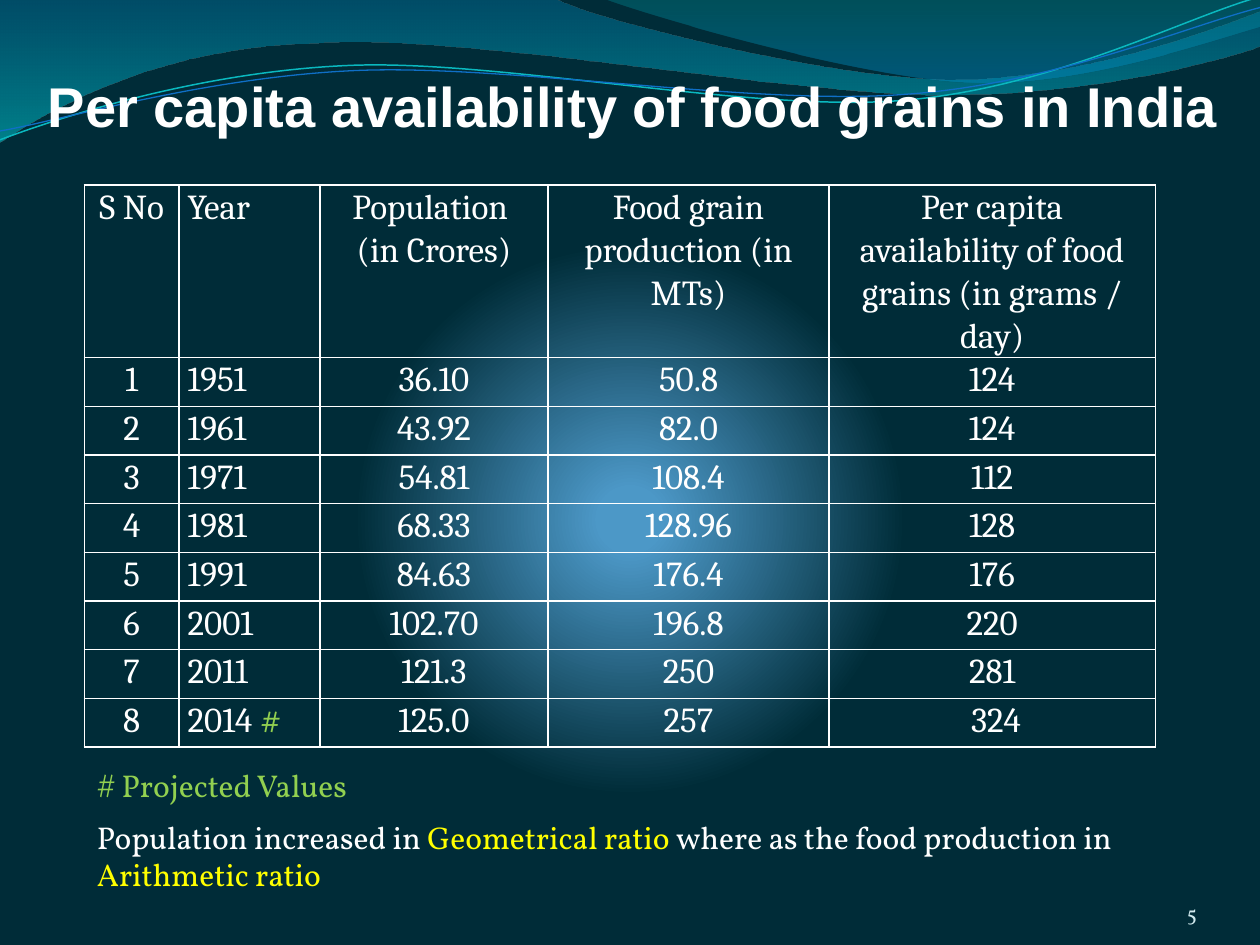
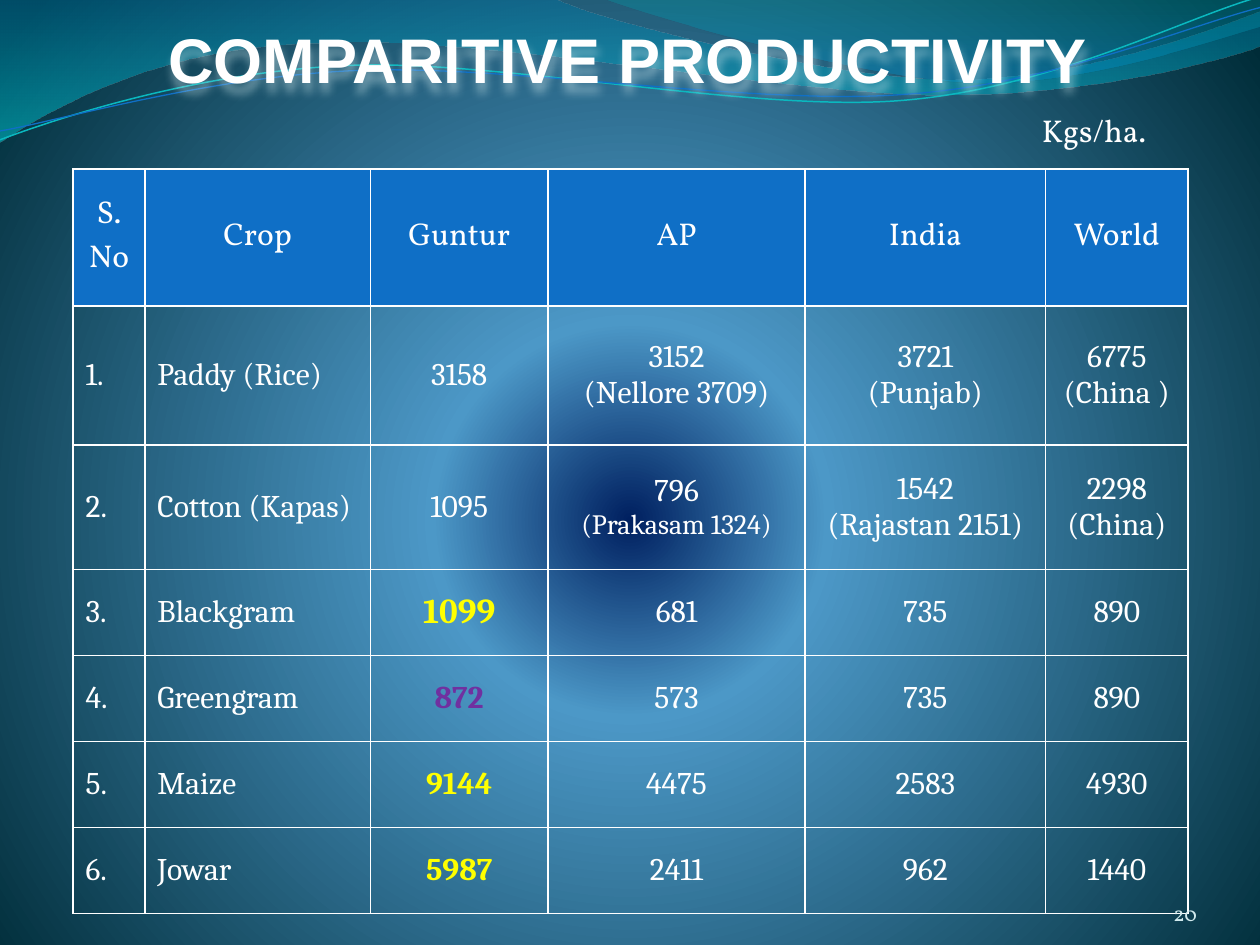
import lxml.etree
import pptx
import pptx.dml.color
import pptx.enum.text
import pptx.oxml.ns
import pptx.util

RGB = pptx.dml.color.RGBColor
ALIGN = pptx.enum.text.PP_ALIGN
ANCHOR = pptx.enum.text.MSO_ANCHOR
Inches = pptx.util.Inches
Pt = pptx.util.Pt
qn = pptx.oxml.ns.qn

WHITE = RGB(0xFF, 0xFF, 0xFF)
YELLOW = RGB(0xFF, 0xFF, 0x00)
GREEN = RGB(0x92, 0xD0, 0x50)
PURPLE = RGB(0x70, 0x30, 0xA0)
BLUE = RGB(0x0F, 0x6F, 0xC6)
AQUA = RGB(0x0A, 0xB8, 0xBF)
PALE = RGB(0xD1, 0xEA, 0xEE)
NIGHT = RGB(0x00, 0x2C, 0x38)
SKY = RGB(0x4C, 0x98, 0xC7)
NAVY = RGB(0x00, 0x20, 0x60)
DEEP_BLUE = RGB(0x00, 0x74, 0xA1)
CYAN = RGB(0x00, 0xC6, 0xCF)
TEAL = RGB(0x00, 0xA1, 0xA9)
OCEAN = RGB(0x00, 0x8B, 0xBF)

TITLE_FONT, BODY_FONT, TABLE_FONT = "Arial", "Vollkorn", "Cambria"
SLIDE_WIDTH, SLIDE_HEIGHT = 10, 7.5
DRAWING_NS = "http://schemas.openxmlformats.org/drawingml/2006/main"
DOWNWARD = '<a:lin ang="5400000" scaled="1"/>'
RADIAL = ('<a:path path="circle"><a:fillToRect l="10000" t="110000" '
          'r="10000" b="100000"/></a:path>')
TITLE_SHADOW = (f'<a:effectLst xmlns:a="{DRAWING_NS}"><a:outerShdw blurRad="63500" '
                f'dist="63500" dir="5400000"><a:srgbClr val="{PALE}">'
                '<a:alpha val="45000"/></a:srgbClr></a:outerShdw></a:effectLst>')

# Text is a string or a list of runs; a run is a string or (string, format).
# Each "\n" starts a new paragraph.
FOOD_TITLE = "Per capita availability of food grains in India"
FOOD_COLUMNS = [0.75, 1.12, 1.81, 2.23, 2.59]
FOOD_ROW_HEIGHTS = [1.16] + [3.09 / 8] * 8
FOOD_ROWS = [
    ["S No", "Year", "Population \n(in Crores)", "Food grain production (in MTs)",
     "Per capita availability of food grains (in grams / day)"],
    ["1", "1951", "36.10", "50.8", "124"],
    ["2", "1961", "43.92", "82.0", "124"],
    ["3", "1971", "54.81", "108.4", "112"],
    ["4", "1981", "68.33", "128.96", "128"],
    ["5", "1991", "84.63", "176.4", "176"],
    ["6", "2001", "102.70", "196.8", "220"],
    ["7", "2011", "121.3", "250", "281"],
    ["8", ["2014 ", ("#", {"color": GREEN})], "125.0", "257", " 324"],
]
PROJECTED_NOTE = "# Projected Values"
RATIO_NOTE = [
    "Population increased in ", ("Geometrical ratio ", {"color": YELLOW}),
    "where as the food production in\n", ("Arithmetic ratio", {"color": YELLOW}),
]

HIGH = {"color": YELLOW, "bold": True}
LOW = {"color": PURPLE, "bold": True}
CROP_TITLE = "COMPARITIVE PRODUCTIVITY"
CROP_UNIT = "Kgs/ha."
CROP_COLUMNS = [0.57, 1.79, 1.41, 2.04, 1.91, 1.13]
CROP_ROW_HEIGHTS = [1.09, 1.1, 0.99] + [2.73 / 4] * 4
CROP_ROWS = [
    ["S. No", "Crop", "Guntur", "AP", "India", "World"],
    ["1.", "Paddy (Rice)", "3158", "3152\n(Nellore 3709)", "3721\n(Punjab)",
     "6775\n(China )"],
    ["2.", "Cotton (Kapas)", "1095", ["796\n", ("(Prakasam 1324)", {"size": 16})],
     "1542\n(Rajastan 2151)", "2298\n(China)"],
    ["3.", "Blackgram", [("1099", {**HIGH, "size": 20})], "681", "735", "890"],
    ["4.", "Greengram", [("872", LOW)], "573", "735", "890"],
    ["5.", "Maize", [("9144", HIGH)], "4475", "2583", "4930"],
    ["6.", "Jowar", [("5987", HIGH)], "2411", "962", "1440"],
]

# Waves: a start point, then straight steps (one point) or Bezier steps (three).
BANDS = [
    ([(0, 0), [(4.4, -0.01)],
      [(4.76, 0.17), (6.64, 0.63), (7.58, 0.63)],
      [(8.53, 0.63), (9.58, 0.26), (10, 0.09)],
      [(10.01, 0.36)],
      [(9.83, 0.44), (8.7, 0.76), (7.46, 0.75)],
      [(6.22, 0.75), (3.82, 0.28), (2.57, 0.34)],
      [(1.29, 0.36), (0.46, 0.83), (-0.01, 1.13)],
      [(0, 0)]],
     [(0, DEEP_BLUE, 45), (100, CYAN, 55)]),
    ([(4.79, -0.01),
      [(5.09, 0.11), (6.82, 0.62), (7.69, 0.65)],
      [(8.56, 0.69), (9.61, 0.32), (10, 0.21)],
      [(10, 0)], [(4.79, -0.01)]],
     [(0, TEAL, 30), (80, OCEAN, 45)]),
]
STRANDS = [
    ([(0, 1.11),
      [(0.48, 0.93), (1.58, 0.57), (2.77, 0.52)],
      [(3.95, 0.47), (5.93, 0.89), (7.13, 0.8)],
      [(8.33, 0.71), (9.38, 0.15), (9.98, -0.02)]], AQUA, 0.85),
    ([(0, 1.04),
      [(0.47, 0.96), (1.64, 0.61), (2.83, 0.56)],
      [(4.03, 0.51), (5.97, 0.84), (7.17, 0.75)],
      [(8.36, 0.67), (9.41, 0.21), (10, 0.06)]], BLUE, 0.75),
]


def set_gradient(parent, stops, direction):
    """Replace the solid fill under parent by a gradient of (place, colour, opacity)."""
    marks = "".join(
        f'<a:gs pos="{place * 1000}"><a:srgbClr val="{color}">'
        f'<a:alpha val="{opacity * 1000}"/></a:srgbClr></a:gs>'
        for place, color, opacity in stops)
    solid = parent.find(qn("a:solidFill"))
    parent.replace(solid, lxml.etree.fromstring(
        f'<a:gradFill xmlns:a="{DRAWING_NS}" rotWithShape="1">'
        f'<a:gsLst>{marks}</a:gsLst>{direction}</a:gradFill>'))


def add_wave(slide, outline, close):
    """Draw the outline's points as straight steps, then bend each group of three."""
    start, *steps = outline
    builder = slide.shapes.build_freeform(*map(Inches, start))
    builder.add_line_segments([(Inches(x), Inches(y)) for step in steps for x, y in step],
                              close=close)
    wave = builder.convert_to_shape()
    wave.shadow.inherit = False
    straights = iter(wave._element.findall(".//" + qn("a:lnTo")))
    for step in steps:
        first, *others = [next(straights) for _ in step]
        if others:
            first.tag = qn("a:cubicBezTo")
            for other in others:
                first.append(other[0])
                other.getparent().remove(other)
    return wave


def write(frame, text, size=18, font=BODY_FONT, color=WHITE, bold=False,
          align=ALIGN.LEFT, spacing=None):
    base = {"size": size, "color": color, "bold": bold}
    paragraph = frame.paragraphs[0]
    paragraphs = [paragraph]
    for part in [text] if isinstance(text, str) else text:
        words, changes = (part, {}) if isinstance(part, str) else part
        look = {**base, **changes}
        for i, line in enumerate(words.split("\n")):
            if i:
                paragraph = frame.add_paragraph()
                paragraphs.append(paragraph)
            if line:
                run = paragraph.add_run()
                run.text = line
                run.font.name = font
                run.font.size = Pt(look["size"])
                run.font.bold = look["bold"]
                run.font.color.rgb = look["color"]
    for paragraph in paragraphs:
        paragraph.alignment = align
        if spacing:
            paragraph.line_spacing = spacing


def set_margins(target, left, top, right, bottom):
    target.margin_left, target.margin_right = Inches(left), Inches(right)
    target.margin_top, target.margin_bottom = Inches(top), Inches(bottom)


def add_text(slide, box, text, wrap=False, margins=(0.1, 0.05, 0.1, 0.05),
             anchor=ANCHOR.TOP, **look):
    area = slide.shapes.add_textbox(*map(Inches, box))
    frame = area.text_frame
    frame.word_wrap = wrap
    frame.vertical_anchor = anchor
    set_margins(frame, *margins)
    write(frame, text, **look)
    return area


def add_borders(cell):
    properties = cell._tc.get_or_add_tcPr()
    for i, side in enumerate("LRTB"):
        properties.insert(i, lxml.etree.fromstring(
            f'<a:ln{side} xmlns:a="{DRAWING_NS}" w="12700"><a:solidFill>'
            f'<a:srgbClr val="{WHITE}"/></a:solidFill></a:ln{side}>'))


def add_grid(slide, left, top, widths, heights, rows, cell_look, margins, anchor):
    """Add a table; cell_look(row, column) gives (fill or None, text format)."""
    table = slide.shapes.add_table(
        len(rows), len(widths), Inches(left), Inches(top),
        Inches(sum(widths)), Inches(sum(heights))).table
    table.first_row = table.horz_banding = False
    for column, width in zip(table.columns, widths):
        column.width = Inches(width)
    for r, (texts, height) in enumerate(zip(rows, heights)):
        table.rows[r].height = Inches(height)
        for c, text in enumerate(texts):
            cell = table.cell(r, c)
            fill, look = cell_look(r, c)
            if fill is None:
                cell.fill.background()
            else:
                cell.fill.solid()
                cell.fill.fore_color.rgb = fill
            add_borders(cell)
            set_margins(cell, *margins)
            cell.vertical_anchor = anchor
            write(cell.text_frame, text, **look)


def food_look(row, column):
    return None, {"size": 20, "font": TABLE_FONT, "spacing": 1.07,
                  "align": ALIGN.LEFT if column == 1 else ALIGN.CENTER}


def crop_look(row, column):
    if row == 0:
        return BLUE, {"align": ALIGN.CENTER}
    return None, {"font": TABLE_FONT, "align": ALIGN.LEFT if column < 2 else ALIGN.CENTER}


def add_base(deck, glow):
    """Add a blank slide with its glowing background and the waves at the top."""
    slide = deck.slides.add_slide(deck.slide_layouts[6])
    slide.background.fill.solid()
    slide.background.fill.fore_color.rgb = NIGHT
    set_gradient(slide._element.find(".//" + qn("p:bgPr")), glow, RADIAL)
    for outline, stops in BANDS:
        band = add_wave(slide, outline, close=True)
        band.line.fill.background()
        band.fill.solid()
        band.fill.fore_color.rgb = NIGHT
        set_gradient(band._element.spPr, stops, DOWNWARD)
    for outline, color, weight in STRANDS:
        strand = add_wave(slide, outline, close=False)
        strand.fill.background()
        strand.line.color.rgb = color
        strand.line.width = Pt(weight)
    return slide


def add_title(slide, box, text, size, **layout):
    return add_text(slide, box, text, size=size, font=TITLE_FONT, bold=True,
                    align=ALIGN.CENTER, **layout)


def add_page_number(slide, number):
    add_text(slide, (8.67, 6.95, 0.83, 0.4), number, wrap=True, margins=(0, 0, 0, 0),
             anchor=ANCHOR.BOTTOM, size=12, color=PALE, align=ALIGN.RIGHT)


def main():
    deck = pptx.Presentation()
    deck.slide_width, deck.slide_height = Inches(SLIDE_WIDTH), Inches(SLIDE_HEIGHT)

    food = add_base(deck, [(4, SKY, 100), (35, NIGHT, 100)])
    add_grid(food, 0.67, 1.47, FOOD_COLUMNS, FOOD_ROW_HEIGHTS, FOOD_ROWS, food_look,
             margins=(0.07, 0, 0.07, 0), anchor=ANCHOR.TOP)
    add_text(food, (0.67, 6.03, 2.2, 0.4), PROJECTED_NOTE, color=GREEN)
    add_text(food, (0.67, 6.44, 8.31, 0.71), RATIO_NOTE)
    add_title(food, (0.25, 0.52, 9.56, 0.64), FOOD_TITLE, 32)
    add_page_number(food, "5")

    crops = add_base(deck, [(0, NAVY, 100), (25, SKY, 100), (100, NIGHT, 100)])
    title = add_title(crops, (0.53, 0, 8.91, 0.76), CROP_TITLE, 36, wrap=True,
                      margins=(0, 0.05, 0, 0), anchor=ANCHOR.BOTTOM)
    title._element.spPr.append(lxml.etree.fromstring(TITLE_SHADOW))
    add_grid(crops, 0.58, 1.34, CROP_COLUMNS, CROP_ROW_HEIGHTS, CROP_ROWS, crop_look,
             margins=(0.1, 0.05, 0.1, 0.05), anchor=ANCHOR.MIDDLE)
    add_text(crops, (8.17, 0.83, 1.03, 0.4), CROP_UNIT)
    add_page_number(crops, "20")

    deck.save("out.pptx")


if __name__ == "__main__":
    main()
